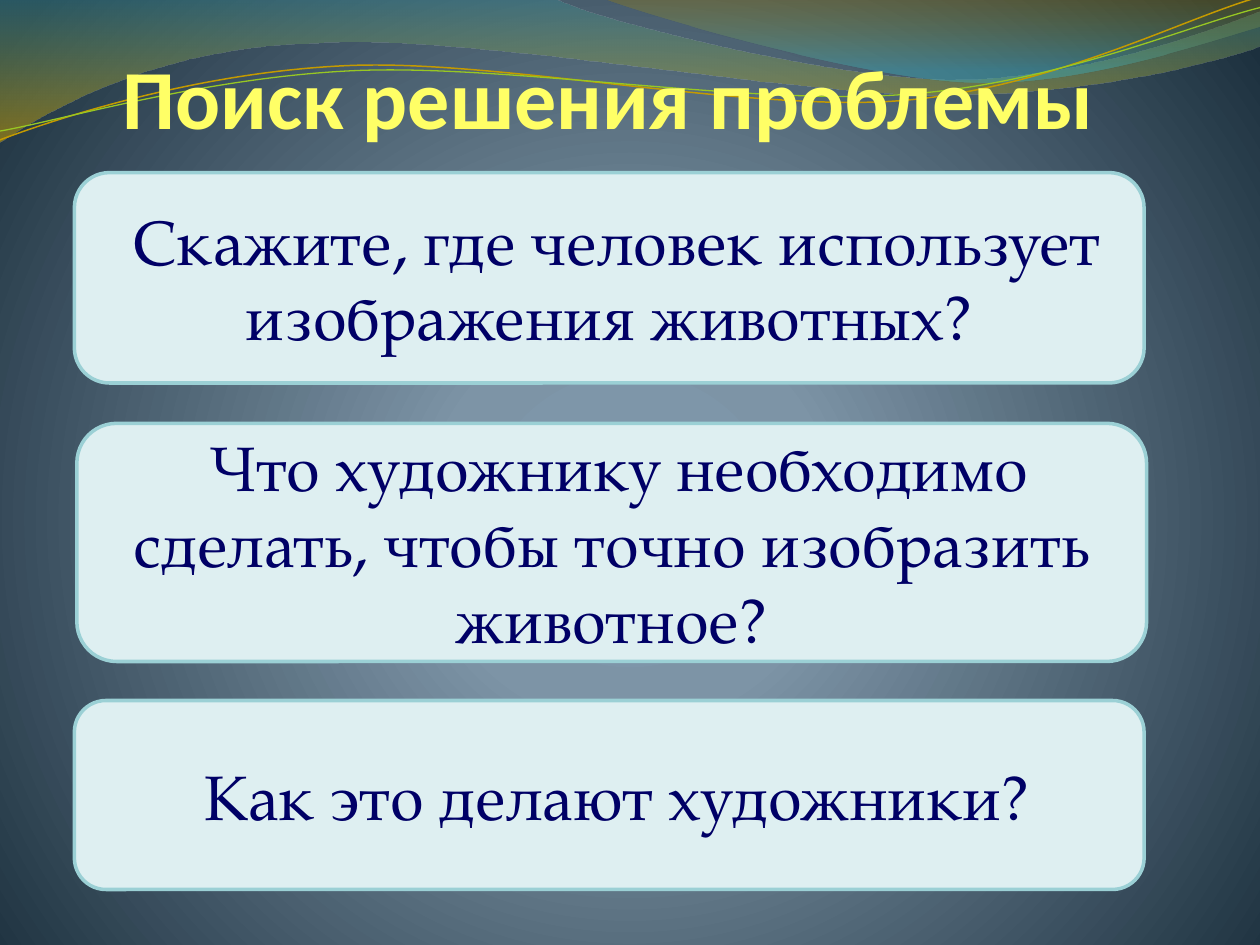
"""Build the slide with three questions on the search for a solution."""
import dataclasses
import itertools
import math
from typing import Optional

import lxml.etree
import pptx
import pptx.dml.color
import pptx.enum.shapes
import pptx.enum.text
import pptx.oxml
import pptx.oxml.ns
import pptx.shapes.autoshape
import pptx.slide
import pptx.util

Inches = pptx.util.Inches
RGBColor = pptx.dml.color.RGBColor
qn = pptx.oxml.ns.qn
MIDDLE = pptx.enum.text.MSO_ANCHOR.MIDDLE
BOTTOM = pptx.enum.text.MSO_ANCHOR.BOTTOM

SLATE, STEEL, NIGHT = RGBColor(128, 154, 175), RGBColor(125, 148, 166), RGBColor(28, 48, 62)
TEAL, AQUA = RGBColor(59, 136, 144), RGBColor(62, 169, 180)
GOLD, OLIVE = RGBColor(201, 158, 0), RGBColor(164, 129, 0)
AMBER, LIME = RGBColor(196, 154, 0), RGBColor(152, 199, 35)
YELLOW, NAVY = RGBColor(255, 255, 102), RGBColor(0, 0, 102)
ICE, ICE_EDGE = RGBColor(222, 239, 241), RGBColor(155, 208, 213)

LINE_TILT = 357.3
LINE_CENTER = (4.99, 0.58)
RADIAL = '<a:path path="circle"><a:fillToRect l="10000" t="110000" r="10000" b="100000"/></a:path>'
DOWNWARD = '<a:lin ang="5400000" scaled="0"/>'

Point = tuple[float, float]


@dataclasses.dataclass(frozen=True)
class Stop:
    """A gradient stop, with position and opacity in percent."""
    position: int
    color: RGBColor
    opacity: int = 100


@dataclasses.dataclass(frozen=True)
class Wave:
    """An outline of straight segments (1 point) and cubic curves (3 points)."""
    start: Point
    segments: tuple[tuple[Point, ...], ...]
    stops: tuple[Stop, ...] = ()
    color: Optional[RGBColor] = None
    width: float = 0


@dataclasses.dataclass(frozen=True)
class Question:
    """A question and the frame of its card in inches."""
    text: str
    left: float
    top: float
    height: float


WAVES = (
    Wave((0, 0), (
        ((4.4, -0.01),),
        ((4.76, 0.17), (6.64, 0.63), (7.58, 0.63)),
        ((8.53, 0.63), (9.58, 0.26), (10, 0.09)),
        ((10.01, 0.36),),
        ((9.83, 0.44), (8.7, 0.76), (7.46, 0.75)),
        ((6.22, 0.75), (3.82, 0.28), (2.57, 0.34)),
        ((1.29, 0.36), (0.46, 0.83), (-0.01, 1.13)),
        ((0, 0),),
    ), (Stop(0, TEAL, 45), Stop(100, GOLD, 55))),
    Wave((4.79, -0.01), (
        ((5.09, 0.11), (6.82, 0.62), (7.69, 0.65)),
        ((8.56, 0.69), (9.61, 0.32), (10, 0.21)),
        ((10, 0),),
        ((4.79, -0.01),),
    ), (Stop(0, OLIVE, 30), Stop(80, AQUA, 45))),
    Wave((0, 1.11), (
        ((0.48, 0.93), (1.58, 0.57), (2.77, 0.52)),
        ((3.95, 0.47), (5.93, 0.89), (7.13, 0.8)),
        ((8.33, 0.71), (9.38, 0.15), (9.98, -0.02)),
    ), color=AMBER, width=0.85),
    Wave((0, 1.04), (
        ((0.47, 0.96), (1.64, 0.61), (2.83, 0.56)),
        ((4.03, 0.51), (5.97, 0.84), (7.17, 0.75)),
        ((8.36, 0.67), (9.41, 0.21), (10, 0.06)),
    ), color=LIME, width=0.75),
)

QUESTIONS = (
    Question(" Скажите, где человек использует изображения животных?", 0.59, 1.37, 1.67),
    Question(" Что художнику необходимо сделать, чтобы точно изобразить животное?", 0.61, 3.36, 1.89),
    Question(" Как это делают художники?", 0.59, 5.56, 1.5),
)


def set_gradient(properties, stops: tuple[Stop, ...], direction: str) -> None:
    """Replace the solid fill of a properties element by a gradient."""
    marks = "".join(
        f'<a:gs pos="{stop.position * 1000}"><a:srgbClr val="{stop.color}">'
        f'<a:alpha val="{stop.opacity * 1000}"/></a:srgbClr></a:gs>'
        for stop in stops
    )
    gradient = pptx.oxml.parse_xml(
        f'<a:gradFill {pptx.oxml.ns.nsdecls("a")} rotWithShape="1">'
        f"<a:gsLst>{marks}</a:gsLst>{direction}</a:gradFill>"
    )
    properties.replace(properties.find(qn("a:solidFill")), gradient)


def level(point: Point) -> Point:
    """Turn a point of a tilted line back to the line's own frame."""
    angle = math.radians(-LINE_TILT)
    dx, dy = (value - center for value, center in zip(point, LINE_CENTER))
    return (LINE_CENTER[0] + dx * math.cos(angle) - dy * math.sin(angle),
            LINE_CENTER[1] + dx * math.sin(angle) + dy * math.cos(angle))


def bend(properties, segments: tuple[tuple[Point, ...], ...]) -> None:
    """Join the straight steps of each three-point segment into a cubic curve."""
    steps = iter(list(properties.iter(qn("a:lnTo"))))
    for segment in segments:
        group = list(itertools.islice(steps, len(segment)))
        if len(group) == 1:
            continue
        curve = lxml.etree.Element(qn("a:cubicBezTo"))
        group[0].addprevious(curve)
        for step in group:
            curve.append(step[0])
            step.getparent().remove(step)


def draw_wave(slide: pptx.slide.Slide, wave: Wave) -> None:
    """Draw a wave as a gradient ribbon or as a thin tilted line."""
    points = [wave.start, *itertools.chain.from_iterable(wave.segments)]
    if not wave.stops:
        points = [level(point) for point in points]
    start, *others = [(Inches(x), Inches(y)) for x, y in points]
    builder = slide.shapes.build_freeform(*start)
    builder.add_line_segments(others, close=bool(wave.stops))
    outline = builder.convert_to_shape()
    outline.shadow.inherit = False
    bend(outline.element.spPr, wave.segments)
    if wave.stops:
        outline.fill.solid()
        set_gradient(outline.element.spPr, wave.stops, DOWNWARD)
        outline.line.fill.background()
    else:
        outline.rotation = LINE_TILT
        outline.fill.background()
        outline.line.color.rgb = wave.color
        outline.line.width = pptx.util.Pt(wave.width)


def write(shape: pptx.shapes.autoshape.Shape, text: str, color: RGBColor,
          anchor: pptx.enum.text.MSO_ANCHOR, font_format: dict) -> None:
    """Write centred, wrapped text into a shape."""
    frame = shape.text_frame
    frame.word_wrap = True
    frame.vertical_anchor = anchor
    paragraph = frame.paragraphs[0]
    paragraph.alignment = pptx.enum.text.PP_ALIGN.CENTER
    run = paragraph.add_run()
    run.text = text
    run.font.color.rgb = color
    for name, value in font_format.items():
        setattr(run.font, name, value)


def draw_title(slide: pptx.slide.Slide, text: str) -> None:
    """Draw the slide heading."""
    heading = slide.shapes.add_textbox(Inches(0.58), Inches(0.29), Inches(8.5), Inches(0.87))
    for side in ("left", "top", "right", "bottom"):
        setattr(heading.text_frame, f"margin_{side}", 0)
    write(heading, text, YELLOW, BOTTOM,
          {"name": "Calibri", "size": pptx.util.Pt(48), "bold": True})


def draw_question(slide: pptx.slide.Slide, question: Question) -> None:
    """Draw a question on its rounded card."""
    card = slide.shapes.add_shape(
        pptx.enum.shapes.MSO_SHAPE.ROUNDED_RECTANGLE,
        Inches(question.left), Inches(question.top), Inches(8.49), Inches(question.height),
    )
    card.shadow.inherit = False
    card.fill.solid()
    card.fill.fore_color.rgb = ICE
    card.line.color.rgb = ICE_EDGE
    card.line.width = pptx.util.Pt(2)
    write(card, question.text, NAVY, MIDDLE,
          {"name": "TeX Gyre Pagella", "size": pptx.util.Pt(36)})


def main() -> None:
    """Build and save the slide."""
    deck = pptx.Presentation()
    deck.slide_width, deck.slide_height = Inches(10), Inches(7.5)
    slide = deck.slides.add_slide(deck.slide_layouts[6])
    slide.background.fill.solid()
    backdrop = slide.element.find(".//" + qn("p:bgPr"))
    set_gradient(backdrop, (Stop(0, SLATE), Stop(25, STEEL), Stop(100, NIGHT)), RADIAL)
    for wave in WAVES:
        draw_wave(slide, wave)
    draw_title(slide, "Поиск решения проблемы")
    for question in QUESTIONS:
        draw_question(slide, question)
    deck.save("out.pptx")


if __name__ == "__main__":
    main()
